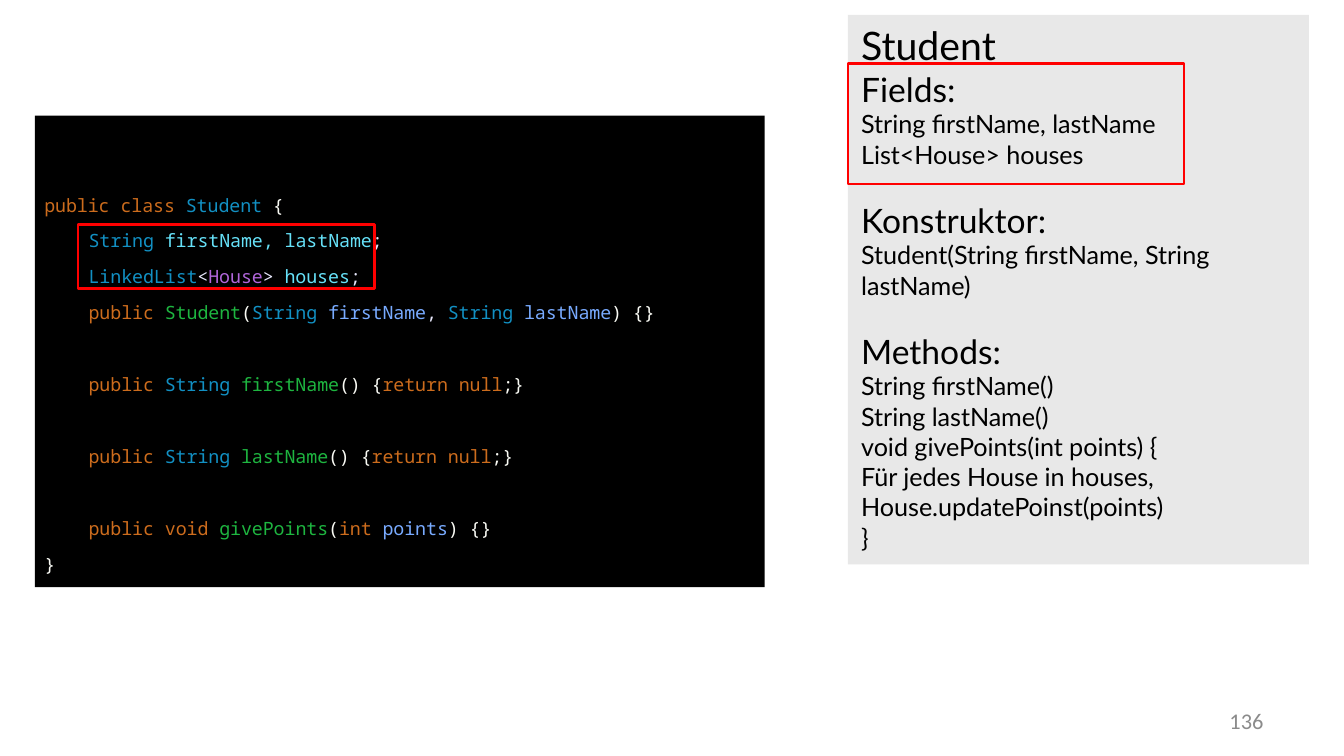
from dataclasses import dataclass

from pptx import Presentation
from pptx.dml.color import RGBColor
from pptx.enum.shapes import MSO_SHAPE
from pptx.enum.text import MSO_ANCHOR, MSO_AUTO_SIZE, PP_ALIGN
from pptx.util import Inches, Pt

RECTANGLE = MSO_SHAPE.RECTANGLE
TOP, MIDDLE = MSO_ANCHOR.TOP, MSO_ANCHOR.MIDDLE
GROW, FIXED = MSO_AUTO_SIZE.SHAPE_TO_FIT_TEXT, MSO_AUTO_SIZE.NONE
LEFT, RIGHT = PP_ALIGN.LEFT, PP_ALIGN.RIGHT

KEYWORD, TYPE, FIELD, METHOD = "CC6C1D", "1290C3", "66E1F8", "1EB540"
PARAMETER, GENERIC, BRACKET, PUNCTUATION = "79ABFF", "B166DA", "F9FAF4", "E6E6FA"
BLACK, PANEL_GREY, RED, NUMBER_GREY = "000000", "E8E8E8", "FF0000", "8B8B8B"

TITLE, HEADING, DETAIL, CODE = 21, 18, 13.5, 9.75
CODE_GAP, CODE_BREAK, SECTION_GAP = 7.5, 26.8, 16.2
CODE_INDENT = 0.33
SLIDE_WIDTH = 10


@dataclass(frozen=True)
class Area:
    left: float
    top: float
    width: float
    height: float


@dataclass(frozen=True)
class Span:
    text: str
    color: str = BLACK


@dataclass(frozen=True)
class Line:
    spans: tuple[Span, ...]
    size: float
    before: float = 0
    indent: float = 0
    align: PP_ALIGN = LEFT


@dataclass(frozen=True)
class TextStyle:
    font: str
    anchor: MSO_ANCHOR
    fit: MSO_AUTO_SIZE
    side: float = 0.1
    top: float = 0.05
    bottom: float = 0.05


def rgb(color: str) -> RGBColor:
    return RGBColor.from_string(color)


def set_all(target, values: dict) -> None:
    for name, value in values.items():
        setattr(target, name, value)


def add_rectangle(page, area: Area, fill: str = "", line: str = ""):
    box = page.shapes.add_shape(
        RECTANGLE, Inches(area.left), Inches(area.top), Inches(area.width), Inches(area.height)
    )
    box.shadow.inherit = False
    if fill:
        box.fill.solid()
        box.fill.fore_color.rgb = rgb(fill)
    else:
        box.fill.background()
    if line:
        box.line.width = Pt(1.5)
        box.line.color.rgb = rgb(line)
    else:
        box.line.fill.background()
    return box


def write_lines(box, lines: list[Line], style: TextStyle) -> None:
    frame = box.text_frame
    set_all(frame, {
        "word_wrap": True, "vertical_anchor": style.anchor, "auto_size": style.fit,
        "margin_left": Inches(style.side), "margin_right": Inches(style.side),
        "margin_top": Inches(style.top), "margin_bottom": Inches(style.bottom),
    })
    for index, line in enumerate(lines):
        para = frame.add_paragraph() if index else frame.paragraphs[0]
        set_all(para, {"alignment": line.align, "space_before": Pt(line.before)})
        if line.indent:
            para._p.get_or_add_pPr().set("marL", str(Inches(line.indent)))
        for span in line.spans:
            run = para.add_run()
            run.text = span.text
            set_all(run.font, {"name": style.font, "size": Pt(line.size)})
            run.font.color.rgb = rgb(span.color)


def code(*spans: Span, before: float = CODE_GAP, indent: float = CODE_INDENT) -> Line:
    return Line(spans, CODE, before, indent)


def getter(name: str) -> Line:
    return code(
        Span("public ", KEYWORD), Span("String ", TYPE), Span(name, METHOD),
        Span("() {", BRACKET), Span("return null", KEYWORD), Span(";}", BRACKET),
        before=CODE_BREAK,
    )


def section(heading: str, details: list[str], before: float = SECTION_GAP) -> list[Line]:
    return [Line((Span(heading),), HEADING, before)] + [
        Line((Span(detail),), DETAIL) for detail in details
    ]


OUTLINE = [
    Line((Span("Student"),), TITLE),
    *section("Fields:", ["String firstName, lastName", "List<House> houses"], before=0),
    *section("Konstruktor:", ["Student(String firstName, String lastName)"]),
    *section("Methods:", [
        "String firstName()",
        "String lastName()",
        "void givePoints(int points) {",
        "Für jedes House in houses, House.updatePoinst(points)",
        "}",
    ]),
]

STUDENT_CLASS = [
    code(
        Span("public class ", KEYWORD), Span("Student ", TYPE), Span("{", BRACKET),
        before=0, indent=0,
    ),
    code(Span("String ", TYPE), Span("firstName, lastName", FIELD), Span(";", PUNCTUATION)),
    code(
        Span("LinkedList", TYPE), Span("<", PUNCTUATION), Span("House", GENERIC),
        Span("> ", PUNCTUATION), Span("houses", FIELD), Span(";", PUNCTUATION),
    ),
    code(
        Span("public ", KEYWORD), Span("Student", METHOD), Span("(", BRACKET),
        Span("String ", TYPE), Span("firstName", PARAMETER), Span(", ", PUNCTUATION),
        Span("String ", TYPE), Span("lastName", PARAMETER), Span(") {}", BRACKET),
    ),
    getter("firstName"),
    getter("lastName"),
    code(
        Span("public void ", KEYWORD), Span("givePoints", METHOD), Span("(", BRACKET),
        Span("int ", KEYWORD), Span("points", PARAMETER), Span(") {}", BRACKET),
        before=CODE_BREAK,
    ),
    code(Span("}", BRACKET), indent=0),
]

HIGHLIGHTS = [Area(6.31, 0.47, 2.5, 0.9), Area(0.58, 1.67, 2.21, 0.48)]


def main() -> None:
    deck = Presentation()
    set_all(deck, {
        "slide_width": Inches(SLIDE_WIDTH), "slide_height": Inches(SLIDE_WIDTH * 9 / 16),
    })
    page = deck.slides.add_slide(deck.slide_layouts[6])

    outline_box = add_rectangle(page, Area(6.31, 0.11, 3.43, 4.09), fill=PANEL_GREY)
    write_lines(outline_box, OUTLINE, TextStyle("Lato", TOP, GROW))

    code_box = add_rectangle(page, Area(0.26, 0.86, 5.43, 3.51), fill=BLACK)
    code_style = TextStyle("Noto Sans Mono", MIDDLE, GROW, 0.07, 0.53, 0.04)
    write_lines(code_box, STUDENT_CLASS, code_style)

    for area in HIGHLIGHTS:
        add_rectangle(page, area, line=RED)

    number_box = page.shapes.add_textbox(Inches(7.17), Inches(5.21), Inches(2.33), Inches(0.3))
    number = Line((Span("136", NUMBER_GREY),), 12, align=RIGHT)
    write_lines(number_box, [number], TextStyle("Calibri", MIDDLE, FIXED))

    deck.save("out.pptx")


if __name__ == "__main__":
    main()
